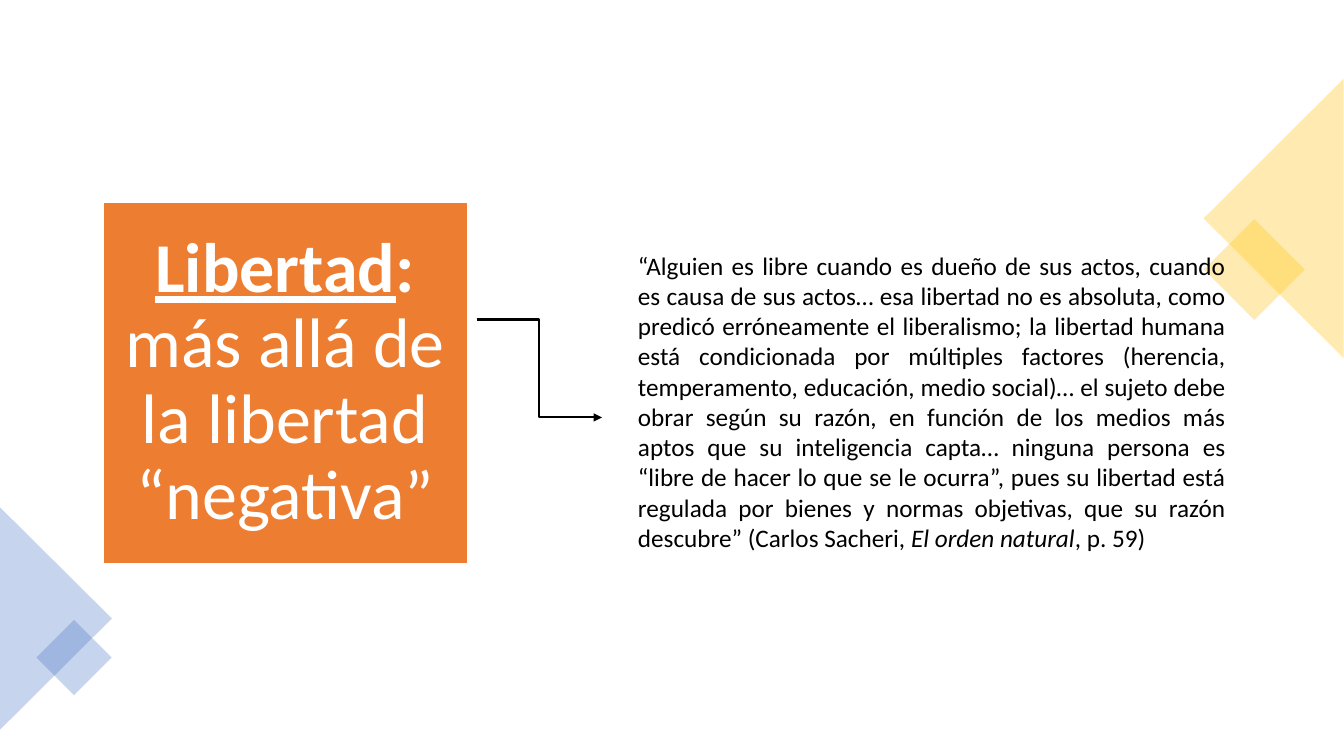
import pptx
import pptx.dml.color
import pptx.enum.shapes
import pptx.enum.text
import pptx.oxml
import pptx.oxml.ns
import pptx.util
from lxml import etree

Pt = pptx.util.Pt
Shape = pptx.enum.shapes.MSO_SHAPE
Align = pptx.enum.text.PP_ALIGN
Anchor = pptx.enum.text.MSO_ANCHOR
qn = pptx.oxml.ns.qn


def color(hex_code):
    return pptx.dml.color.RGBColor.from_string(hex_code)


def add_span(para, text, size, ink, bold=False, italic=False, underline=False):
    span = para.add_run()
    span.text = text
    font = span.font
    font.name, font.size = "Calibri", Pt(size)
    font.bold, font.italic, font.underline = bold, italic, underline
    font.color.rgb = color(ink)


deck = pptx.Presentation()
deck.slide_width, deck.slide_height = Pt(960), Pt(540)
page = deck.slides.add_slide(deck.slide_layouts[6])

# Translucent corner decorations
YELLOW, BLUE = "FFC000", "4472C4"
decorations = [
    (Shape.RECTANGLE, 870.5, 167, 51, 51, 45, YELLOW),
    (Shape.ISOSCELES_TRIANGLE, 810, 106, 199.5, 100, 270, YELLOW),
    (Shape.ISOSCELES_TRIANGLE, -39.6, 401.8, 159, 80, 90, BLUE),
    (Shape.RECTANGLE, 33.8, 450.7, 38, 38, 45, BLUE),
]
for kind, left, top, width, height, angle, tint in decorations:
    corner = page.shapes.add_shape(kind, Pt(left), Pt(top), Pt(width), Pt(height))
    corner.rotation = angle
    corner.shadow.inherit = False
    corner.line.fill.background()
    corner.fill.solid()
    corner.fill.fore_color.rgb = color(tint)
    tint_xml = corner.fill._xPr.find(qn("a:solidFill"))[0]
    etree.SubElement(tint_xml, qn("a:alpha"), val="30000")

# Orange title square
title_box = page.shapes.add_shape(Shape.RECTANGLE, Pt(73.5), Pt(144.7), Pt(260.5), Pt(257.8))
title_box.shadow.inherit = False
title_box.fill.solid()
title_box.fill.fore_color.rgb = color("ED7D31")
title_box.line.color.rgb = color("FFFFFF")
title_box.line.width = Pt(1)
frame = title_box.text_frame
frame.word_wrap = True
frame.vertical_anchor = Anchor.MIDDLE
frame.margin_left = frame.margin_right = frame.margin_top = frame.margin_bottom = Pt(15)
para = frame.paragraphs[0]
para.alignment = Align.CENTER
para.line_spacing = 0.9
add_span(para, "Libertad", 50, "FFFFFF", bold=True, underline=True)
add_span(para, ": ", 50, "FFFFFF", bold=True)
add_span(para, "más allá de la libertad “negativa”", 50, "FFFFFF")

# Quotation
quote_box = page.shapes.add_textbox(Pt(448.6), Pt(175), Pt(434), Pt(225.4))
frame = quote_box.text_frame
frame.word_wrap = True
frame.auto_size = pptx.enum.text.MSO_AUTO_SIZE.SHAPE_TO_FIT_TEXT
para = frame.paragraphs[0]
para.alignment = Align.JUSTIFY
add_span(
    para,
    "“Alguien es libre cuando es dueño de sus actos, cuando es causa de sus actos… "
    "esa libertad no es absoluta, como predicó erróneamente el liberalismo; la libertad "
    "humana está condicionada por múltiples factores (herencia, temperamento, educación, "
    "medio social)… el sujeto debe obrar según su razón, en función de los medios más aptos "
    "que su inteligencia capta… ninguna persona es “libre de hacer lo que se le ocurra”, "
    "pues su libertad está regulada por bienes y normas objetivas, que su razón descubre” "
    "(Carlos Sacheri, ",
    18, "000000",
)
add_span(para, "El orden natural", 18, "000000", italic=True)
add_span(para, ", p. 59)", 18, "000000")

# Elbow arrow from title to quotation
arrow = page.shapes.add_connector(
    pptx.enum.shapes.MSO_CONNECTOR.ELBOW, Pt(340.5), Pt(228.2), Pt(430), Pt(298.2)
)
arrow.line.color.rgb = color("000000")
arrow.line.width = Pt(1.5)
etree.SubElement(arrow.line._get_or_add_ln(), qn("a:tailEnd"), type="triangle")
etree.SubElement(arrow._element.spPr, qn("a:effectLst"))

deck.save("out.pptx")
